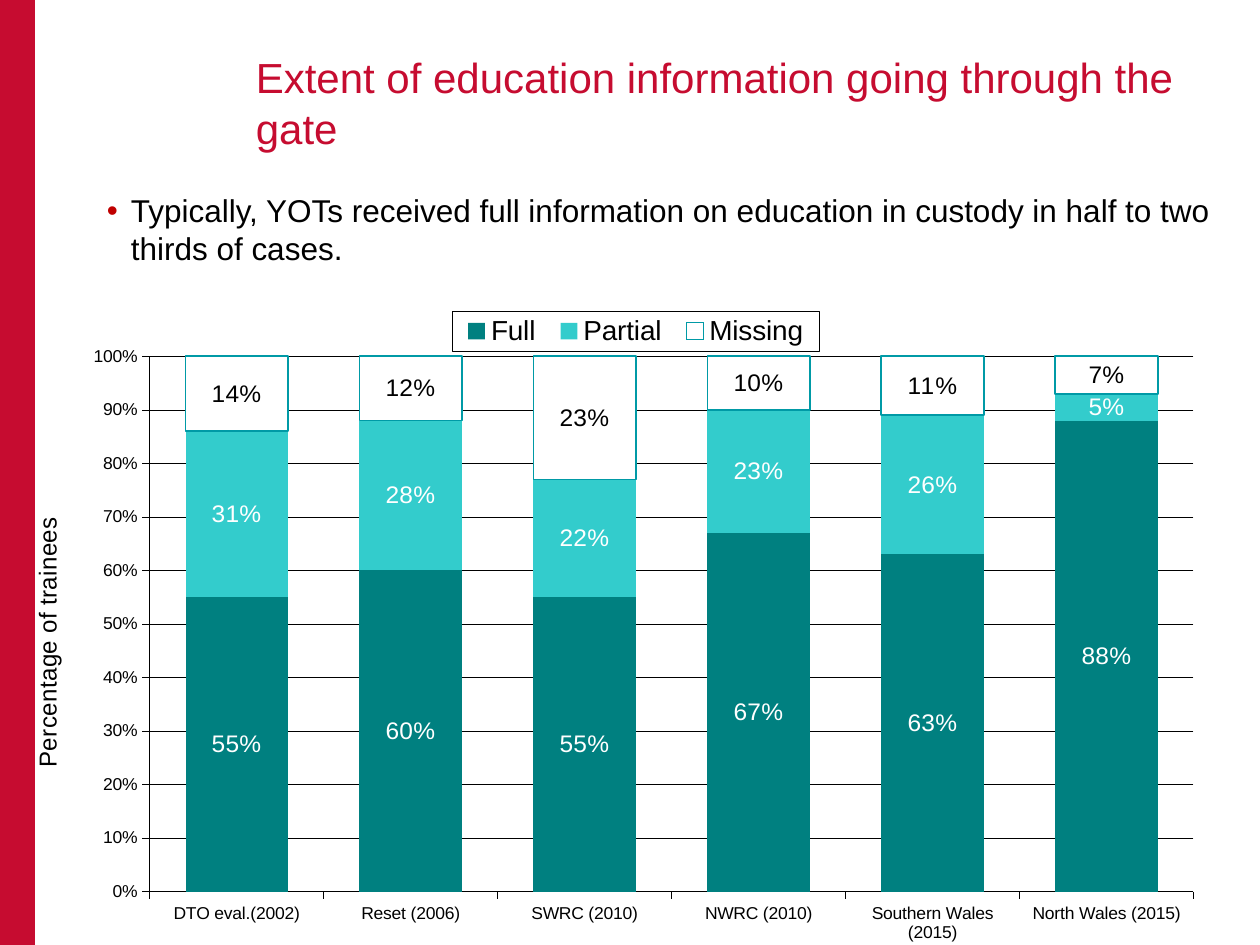
import pptx
import pptx.chart.data
import pptx.dml.color
import pptx.enum.chart
import pptx.enum.shapes
import pptx.enum.text
import pptx.oxml
import pptx.oxml.ns
import pptx.util
from dataclasses import dataclass
from lxml import etree

Pt = pptx.util.Pt
qn = pptx.oxml.ns.qn


@dataclass(frozen=True)
class Theme:
    font: str = "Arial"
    accent: str = "C60C30"
    bullet: str = "C00000"
    ink: str = "000000"
    paper: str = "FFFFFF"
    full: str = "008080"
    partial: str = "33CCCC"
    outline: str = "009AA6"
    title_size: float = 24
    body_size: float = 18
    legend_size: float = 16
    label_size: float = 14
    axis_size: float = 10
    hairline: float = 0.25


def rgb(color):
    return pptx.dml.color.RGBColor.from_string(color)


def chart_layout(values, inner=False):
    layout = etree.Element(qn("c:layout"))
    manual = etree.SubElement(layout, qn("c:manualLayout"))
    if inner:
        etree.SubElement(manual, qn("c:layoutTarget"), val="inner")
    for mode in ("xMode", "yMode"):
        etree.SubElement(manual, qn(f"c:{mode}"), val="edge")
    for key, value in zip("xywh", values):
        etree.SubElement(manual, qn(f"c:{key}"), val=str(value))
    return layout


class SlideBuilder:
    def __init__(self, page, theme):
        self.page = page
        self.theme = theme

    def style_font(self, font, size, color):
        font.name = self.theme.font
        font.size = Pt(size)
        font.bold = False
        font.color.rgb = rgb(color)

    def style_line(self, line, color, width):
        line.color.rgb = rgb(color)
        line.width = Pt(width)

    def band(self, left, top, width, height, color):
        band = self.page.shapes.add_shape(
            pptx.enum.shapes.MSO_SHAPE.RECTANGLE, Pt(left), Pt(top), Pt(width), Pt(height))
        band.shadow.inherit = False
        band.fill.solid()
        band.fill.fore_color.rgb = rgb(color)
        band.line.fill.background()

    def title(self, text, left, top, width, height):
        title = self.page.shapes.title
        title.left, title.top, title.width, title.height = map(Pt, (left, top, width, height))
        frame = title.text_frame
        frame.text = text
        frame.word_wrap = True
        frame.auto_size = pptx.enum.text.MSO_AUTO_SIZE.NONE
        frame.vertical_anchor = pptx.enum.text.MSO_ANCHOR.TOP
        para = frame.paragraphs[0]
        para.alignment = pptx.enum.text.PP_ALIGN.LEFT
        self.style_font(para.runs[0].font, self.theme.title_size, self.theme.accent)

    def bullet(self, text, left, top, width, height, indent):
        box = self.page.shapes.add_textbox(Pt(left), Pt(top), Pt(width), Pt(height))
        frame = box.text_frame
        frame.word_wrap = True
        frame.text = text
        para = frame.paragraphs[0]
        properties = para._p.get_or_add_pPr()
        properties.set("marL", str(Pt(indent)))
        properties.set("indent", str(-Pt(indent)))
        color = etree.SubElement(properties, qn("a:buClr"))
        etree.SubElement(color, qn("a:srgbClr"), val=self.theme.bullet)
        etree.SubElement(properties, qn("a:buFont"), typeface=self.theme.font)
        etree.SubElement(properties, qn("a:buChar"), char="•")
        self.style_font(para.runs[0].font, self.theme.body_size, self.theme.ink)

    def stacked_chart(self, categories, series, axis_title, left, top, width, height):
        theme = self.theme
        data = pptx.chart.data.CategoryChartData(number_format="0%")
        data.categories = categories
        for name, values, *_ in series:
            data.add_series(name, values)
        chart = self.page.shapes.add_chart(
            pptx.enum.chart.XL_CHART_TYPE.COLUMN_STACKED_100,
            Pt(left), Pt(top), Pt(width), Pt(height), data).chart
        self.style_font(chart.font, theme.label_size, theme.ink)
        chart.has_title = False
        plot = chart.plots[0]
        plot.gap_width = 70
        plot.overlap = 100
        plot.vary_by_categories = False
        for column, (_, _, fill, outline, label) in zip(plot.series, series):
            column.format.fill.solid()
            column.format.fill.fore_color.rgb = rgb(fill)
            if outline:
                self.style_line(column.format.line, outline, 1)
            else:
                column.format.line.fill.background()
            labels = column.data_labels
            labels.show_value = True
            labels.number_format = "0%"
            labels.number_format_is_linked = False
            self.style_font(labels.font, theme.label_size, label)
        self.axes(chart, axis_title)
        self.legend(chart)
        area = chart._chartSpace.chart.plotArea
        for layout in area.findall(qn("c:layout")):
            area.remove(layout)
        area.insert(0, chart_layout((0.102, 0.138, 0.855, 0.805), inner=True))

    def axes(self, chart, axis_title):
        theme = self.theme
        for axis in (chart.category_axis, chart.value_axis):
            axis.major_tick_mark = pptx.enum.chart.XL_TICK_MARK.OUTSIDE
            axis.minor_tick_mark = pptx.enum.chart.XL_TICK_MARK.NONE
            self.style_font(axis.tick_labels.font, theme.axis_size, theme.ink)
            self.style_line(axis.format.line, theme.ink, theme.hairline)
        axis = chart.value_axis
        axis.minimum_scale = 0
        axis.maximum_scale = 1
        axis.major_unit = 0.1
        axis.tick_labels.number_format = "0%"
        axis.tick_labels.number_format_is_linked = False
        axis.has_major_gridlines = True
        self.style_line(axis.major_gridlines.format.line, theme.ink, theme.hairline)
        frame = axis.axis_title.text_frame
        frame.text = axis_title
        self.style_font(frame.paragraphs[0].runs[0].font, theme.label_size, theme.ink)

    def legend(self, chart):
        theme = self.theme
        chart.has_legend = True
        legend = chart.legend
        legend.position = pptx.enum.chart.XL_LEGEND_POSITION.TOP
        legend.include_in_layout = False
        self.style_font(legend.font, theme.legend_size, theme.ink)
        element = legend._element
        element.find(qn("c:legendPos")).addnext(chart_layout((0.35, 0.07, 0.3, 0.06)))
        border = etree.Element(qn("c:spPr"))
        line = etree.SubElement(border, qn("a:ln"), w=str(Pt(theme.hairline)))
        fill = etree.SubElement(line, qn("a:solidFill"))
        etree.SubElement(fill, qn("a:srgbClr"), val=theme.ink)
        element.find(qn("c:txPr")).addprevious(border)


def main():
    theme = Theme()
    deck = pptx.Presentation()
    deck.slide_width, deck.slide_height = Pt(720), Pt(540)
    page = deck.slides.add_slide(deck.slide_layouts[5])
    builder = SlideBuilder(page, theme)
    builder.band(0, 0, 20, 540, theme.accent)
    builder.title("Extent of education information going through the gate", 139, 26, 581, 79)
    categories = ["DTO eval.(2002)", "Reset (2006)", "SWRC (2010)", "NWRC (2010)",
                  "Southern Wales (2015)", "North Wales (2015)"]
    series = [
        ("Full", (0.55, 0.6, 0.55, 0.67, 0.63, 0.88), theme.full, None, theme.paper),
        ("Partial", (0.31, 0.28, 0.22, 0.23, 0.26, 0.05), theme.partial, None, theme.paper),
        ("Missing", (0.14, 0.12, 0.23, 0.1, 0.11, 0.07), theme.paper, theme.outline, theme.ink),
    ]
    builder.stacked_chart(categories, series, "Percentage of trainees", 14.4, 151.2, 697.7, 387.4)
    builder.bullet("Typically, YOTs received full information on education in custody "
                   "in half to two thirds of cases.", 54, 105.8, 692, 51, 13.7)
    deck.save("out.pptx")


if __name__ == "__main__":
    main()
